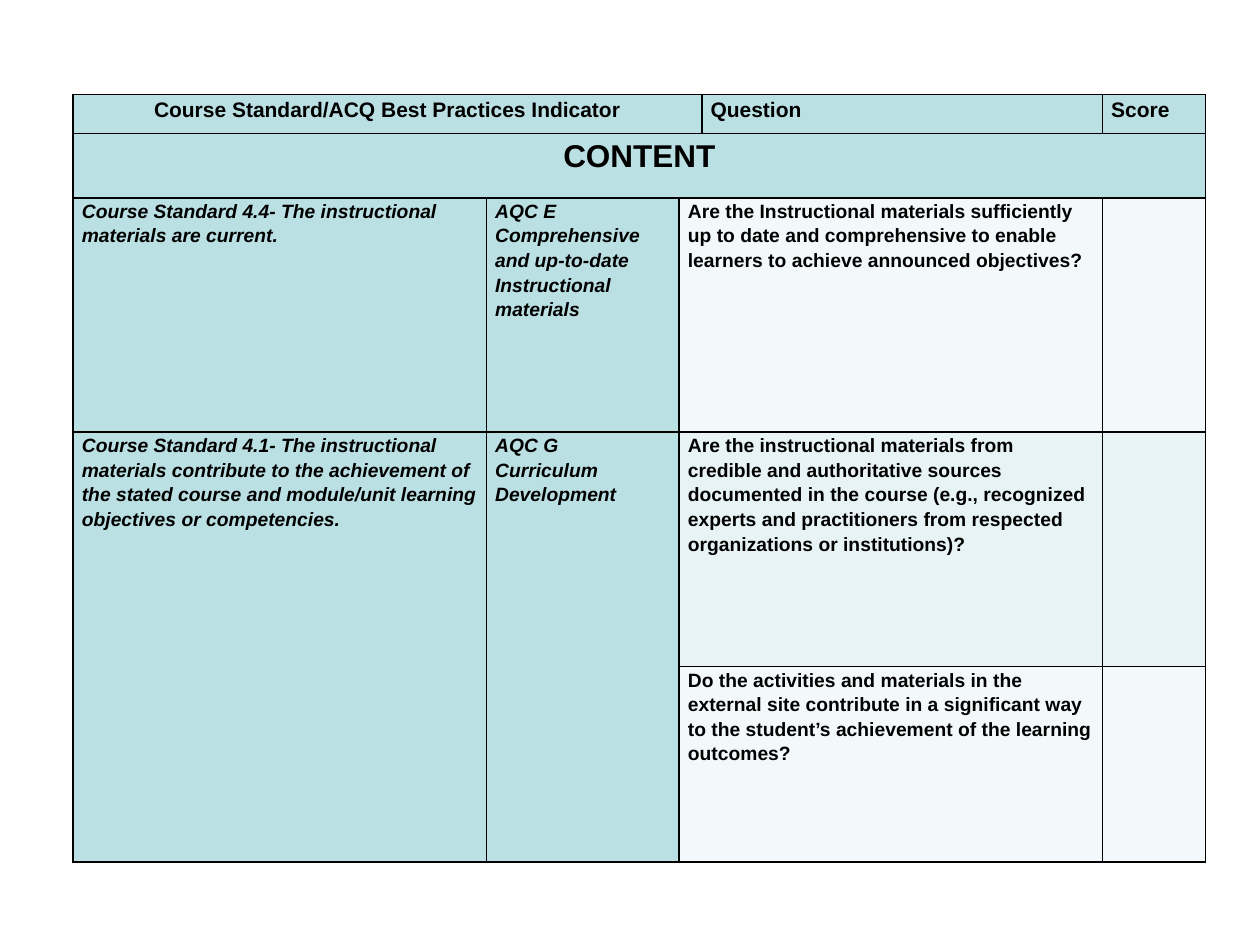
from lxml.etree import SubElement
from pptx import Presentation
from pptx.dml.color import RGBColor
from pptx.enum.text import PP_ALIGN
from pptx.oxml.ns import qn
from pptx.util import Inches, Pt

TEAL, PALE, LIGHT = "BBE0E3", "F3F9FA", "E7F3F4"
COL_WIDTHS = [3.28, 1.53, 0.18, 3.18, 0.82]
ROW_HEIGHTS = [0.31, 0.51, 1.86, 1.86, 1.55]

# Fill of each column, row by row
FILLS = [
    [TEAL] * 5,
    [TEAL] * 5,
    [TEAL] * 2 + [PALE] * 3,
    [TEAL] * 2 + [LIGHT] * 3,
    [TEAL] * 2 + [PALE] * 3,
]

# First and last cell of each merged area
MERGES = [
    ((0, 0), (0, 2)),
    ((1, 0), (1, 4)),
    ((2, 2), (2, 3)),
    ((3, 0), (4, 0)),
    ((3, 1), (4, 1)),
    ((3, 2), (3, 3)),
    ((4, 2), (4, 3)),
]

# Text styles: size, italic, alignment
HEAD = (12, False, PP_ALIGN.LEFT)
HEAD_MID = (12, False, PP_ALIGN.CENTER)
TITLE = (18, False, PP_ALIGN.CENTER)
STANDARD = (11, True, PP_ALIGN.LEFT)
QUESTION = (11, False, PP_ALIGN.LEFT)

# (row, column): style, paragraphs
TEXTS = {
    (0, 0): (HEAD_MID, ["Course Standard/ACQ Best Practices Indicator"]),
    (0, 3): (HEAD, ["Question"]),
    (0, 4): (HEAD, ["Score"]),
    (1, 0): (TITLE, ["CONTENT"]),
    (2, 0): (STANDARD, ["Course Standard 4.4- The instructional materials are current."]),
    (2, 1): (STANDARD, ["AQC E Comprehensive and up-to-date Instructional materials"]),
    (2, 2): (QUESTION, ["Are the Instructional materials sufficiently up to date and "
                        "comprehensive to enable learners to achieve announced objectives?"]),
    (3, 0): (STANDARD, ["Course Standard 4.1- The instructional materials contribute to the "
                        "achievement of the stated course and module/unit learning "
                        "objectives or competencies."]),
    (3, 1): (STANDARD, ["AQC G", "Curriculum Development"]),
    (3, 2): (QUESTION, ["Are the instructional materials from credible and authoritative "
                        "sources documented in the course (e.g., recognized experts and "
                        "practitioners from respected organizations or institutions)?"]),
    (4, 2): (QUESTION, ["Do the activities and materials in the external site contribute in "
                        "a significant way to the student’s achievement of the learning "
                        "outcomes?"]),
}


def rgb(value):
    return RGBColor.from_string(value)


def style_cell(cell, color):
    cell.margin_left = cell.margin_right = Inches(0.07)
    cell.margin_top = cell.margin_bottom = 0
    # Borders come before the fill in the cell properties
    tc_pr = cell._tc.get_or_add_tcPr()
    for side in ("a:lnL", "a:lnR", "a:lnT", "a:lnB"):
        ln = SubElement(tc_pr, qn(side), w=str(Pt(1)))
        fill = SubElement(ln, qn("a:solidFill"))
        SubElement(fill, qn("a:srgbClr"), val="000000")
    cell.fill.solid()
    cell.fill.fore_color.rgb = rgb(color)
    cell.text_frame.paragraphs[0].font.size = Pt(11)


def write(cell, style, lines):
    size, italic, align = style
    tf = cell.text_frame
    for i, line in enumerate(lines):
        p = tf.add_paragraph() if i else tf.paragraphs[0]
        p.alignment = align
        p.line_spacing = 1.15
        r = p.add_run()
        r.text = line
        r.font.name = "Arial"
        r.font.size = Pt(size)
        r.font.bold = True
        r.font.italic = italic
        r.font.color.rgb = rgb("000000")


def main():
    prs = Presentation()
    prs.slide_width, prs.slide_height = Inches(10), Inches(7.5)
    s = prs.slides.add_slide(prs.slide_layouts[6])

    # Table grid
    table = s.shapes.add_table(
        len(ROW_HEIGHTS), len(COL_WIDTHS), Inches(0.58), Inches(0.75),
        Inches(sum(COL_WIDTHS)), Inches(sum(ROW_HEIGHTS))).table
    table.first_row = table.horz_banding = False
    for col, width in zip(table.columns, COL_WIDTHS):
        col.width = Inches(width)
    for row, height in zip(table.rows, ROW_HEIGHTS):
        row.height = Inches(height)

    # Cell look, merged areas, wording
    for row, colors in zip(table.rows, FILLS):
        for cell, color in zip(row.cells, colors):
            style_cell(cell, color)
    for first, last in MERGES:
        table.cell(*first).merge(table.cell(*last))
    for place, (style, lines) in TEXTS.items():
        write(table.cell(*place), style, lines)

    prs.save("out.pptx")


if __name__ == "__main__":
    main()
